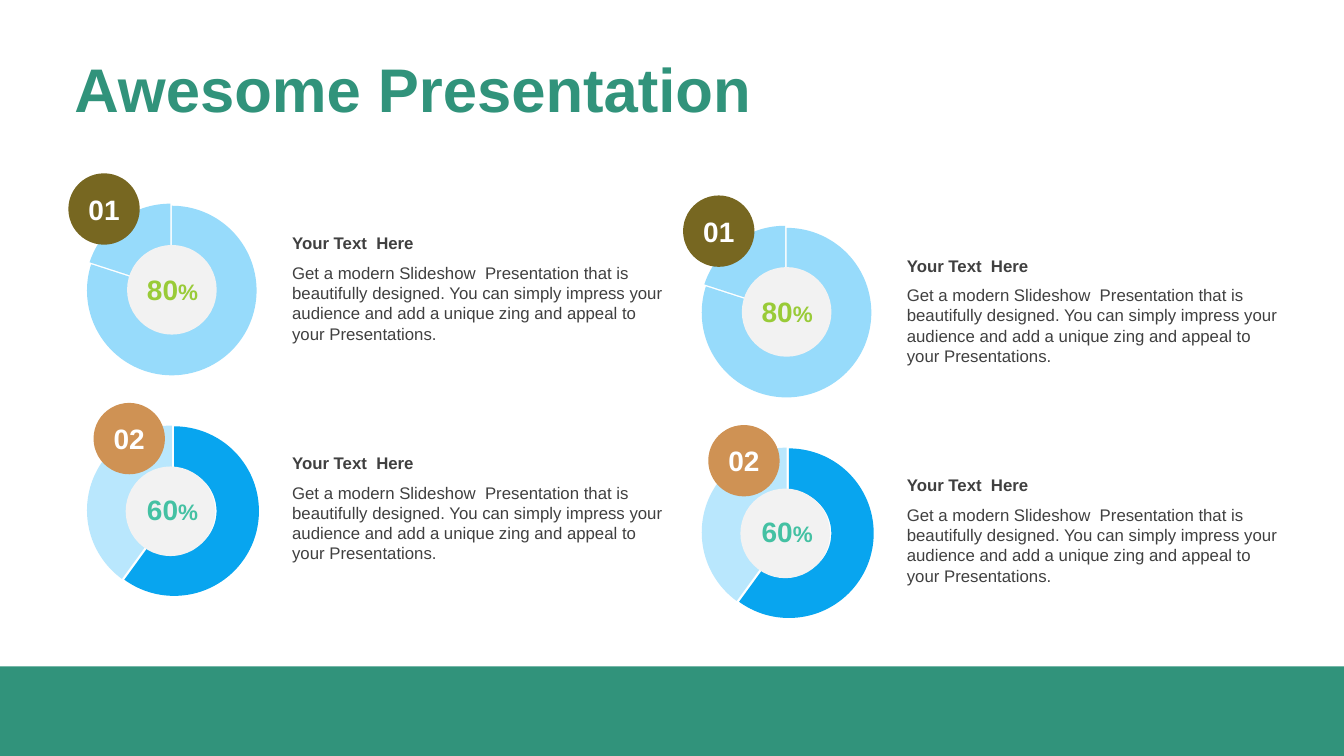
import itertools
from dataclasses import dataclass

import pptx
import pptx.chart.data
import pptx.dml.color
import pptx.enum.chart
import pptx.enum.shapes
import pptx.enum.text
import pptx.oxml
import pptx.oxml.ns
import pptx.util

Pt = pptx.util.Pt
PP_ALIGN = pptx.enum.text.PP_ALIGN
SHAPE = pptx.enum.shapes.MSO_SHAPE

FONT = "Arial"
GREEN, WHITE, GREY, DISC = "31937B", "FFFFFF", "404040", "F2F2F2"
HEADING = "Your Text  Here"
BODY = ("Get a modern Slideshow  Presentation that is beautifully designed. "
        "You can simply impress your audience and add a unique zing and appeal "
        "to your Presentations.")
PLOT = {"x": 0.054, "y": 0.048, "w": 0.891, "h": 0.918}


@dataclass
class Run:
    text: str
    size: float
    color: str
    bold: bool = True


@dataclass
class Column:
    left: float
    top: float


@dataclass
class Card:
    number: str
    percent: int
    ring: tuple[str, str]
    exploded: int
    percent_color: str
    badge_color: str
    drop: float                   # distance below the column's top
    disc: tuple[float, float]     # offsets from the chart's corner
    badge: tuple[float, float]


COLUMNS = [Column(54.8, 140.4), Column(493.9, 156.2)]
CARDS = [
    Card("01", 80, ("97DBFB", "97DBFB"), 1, "99CB38", "776721", 0,
         (36, 34.6), (-6, -16.6)),
    Card("02", 60, ("08A5EF", "B9E7FD"), 0, "44C1A3", "CF9254", 157,
         (35, 35.8), (12, -9.6)),
]


def rgb(color: str) -> pptx.dml.color.RGBColor:
    return pptx.dml.color.RGBColor.from_string(color)


def add_run(p, run: Run) -> None:
    r = p.add_run()
    r.text = run.text
    r.font.name = FONT
    r.font.size = Pt(run.size)
    r.font.bold = run.bold
    r.font.color.rgb = rgb(run.color)


def add_text(s, left: float, top: float, width: float, height: float,
             runs: list[Run], align=PP_ALIGN.LEFT) -> None:
    tf = s.shapes.add_textbox(Pt(left), Pt(top), Pt(width), Pt(height)).text_frame
    tf.word_wrap = True
    p = tf.paragraphs[0]
    p.alignment = align
    for run in runs:
        add_run(p, run)


def add_shape(s, kind, left: float, top: float, width: float, height: float,
              color: str) -> None:
    sp = s.shapes.add_shape(kind, Pt(left), Pt(top), Pt(width), Pt(height))
    sp.shadow.inherit = False
    sp.fill.solid()
    sp.fill.fore_color.rgb = rgb(color)
    sp.line.fill.background()


def add_ring(s, left: float, top: float, card: Card) -> None:
    data = pptx.chart.data.CategoryChartData()
    data.categories = ["1", "2"]
    data.add_series("Series 1", (card.percent, 100 - card.percent))
    chart = s.shapes.add_chart(pptx.enum.chart.XL_CHART_TYPE.DOUGHNUT, Pt(left), Pt(top),
                               Pt(136), Pt(132.5), data).chart
    chart.has_legend = False
    chart.has_title = False
    chart.font.name = FONT
    chart.font.size = Pt(18)
    chart.font.color.rgb = rgb("000000")
    plot = chart.plots[0]
    plot.vary_by_categories = False
    plot.has_data_labels = False
    qn = pptx.oxml.ns.qn
    for i, color in enumerate(card.ring):
        point = plot.series[0].points[i]
        point.format.fill.solid()
        point.format.fill.fore_color.rgb = rgb(color)
        point.format.line.fill.background()

    # Pulled-out slice, hole size and plot position
    ns = pptx.oxml.ns.nsdecls("c")
    area = chart.element.find(".//" + qn("c:plotArea"))
    slice_pt = area.findall(".//" + qn("c:dPt"))[card.exploded]
    slice_pt.find(qn("c:spPr")).addprevious(
        pptx.oxml.parse_xml(f'<c:explosion {ns} val="6"/>'))
    area.find(".//" + qn("c:holeSize")).set("val", "70")
    for layout in area.findall(qn("c:layout")):
        area.remove(layout)
    modes = '<c:xMode val="edge"/><c:yMode val="edge"/>'
    sizes = "".join(f'<c:{key} val="{value}"/>' for key, value in PLOT.items())
    area.insert(0, pptx.oxml.parse_xml(
        f'<c:layout {ns}><c:manualLayout><c:layoutTarget val="inner"/>'
        f'{modes}{sizes}</c:manualLayout></c:layout>'))


def add_card(s, column: Column, card: Card) -> None:
    left, top = column.left, column.top + card.drop
    add_ring(s, left, top, card)

    # Percentage in the middle of the ring
    add_shape(s, SHAPE.OVAL, left + card.disc[0], top + card.disc[1], 64, 64, DISC)
    add_text(s, left + 37.4, top + 50.7, 62, 31.5,
             [Run(str(card.percent), 20, card.percent_color),
              Run("%", 16, card.percent_color)], PP_ALIGN.CENTER)

    # Number badge
    x, y = left + card.badge[0], top + card.badge[1]
    add_shape(s, SHAPE.OVAL, x, y, 51, 51, card.badge_color)
    add_text(s, x + 1, y + 9.8, 49, 31.5, [Run(card.number, 20, WHITE)], PP_ALIGN.CENTER)

    # Heading and description
    add_text(s, left + 146.8, top + 43.8, 285.8, 65.4, [Run(BODY, 12, GREY, False)])
    add_text(s, left + 146.8, top + 22.6, 285.8, 21.8, [Run(HEADING, 12, GREY)])


def add_title(s, text: str) -> None:
    sp = s.shapes.title
    sp.left, sp.top, sp.width, sp.height = Pt(46), Pt(32.4), Pt(510.5), Pt(60.5)
    tf = sp.text_frame
    tf.word_wrap = True
    tf.auto_size = pptx.enum.text.MSO_AUTO_SIZE.NONE
    tf.vertical_anchor = pptx.enum.text.MSO_ANCHOR.MIDDLE
    p = tf.paragraphs[0]
    p.alignment = PP_ALIGN.LEFT
    add_run(p, Run(text, 44, GREEN))


def main() -> None:
    prs = pptx.Presentation()
    prs.slide_width, prs.slide_height = Pt(960), Pt(540)
    s = prs.slides.add_slide(prs.slide_layouts.get_by_name("Title Only"))

    # Footer band
    add_shape(s, SHAPE.RECTANGLE, 0, 476, 962, 64, GREEN)

    # Two columns of cards
    for column, card in itertools.product(COLUMNS, CARDS):
        add_card(s, column, card)

    add_title(s, "Awesome Presentation")
    prs.save("out.pptx")


if __name__ == "__main__":
    main()
